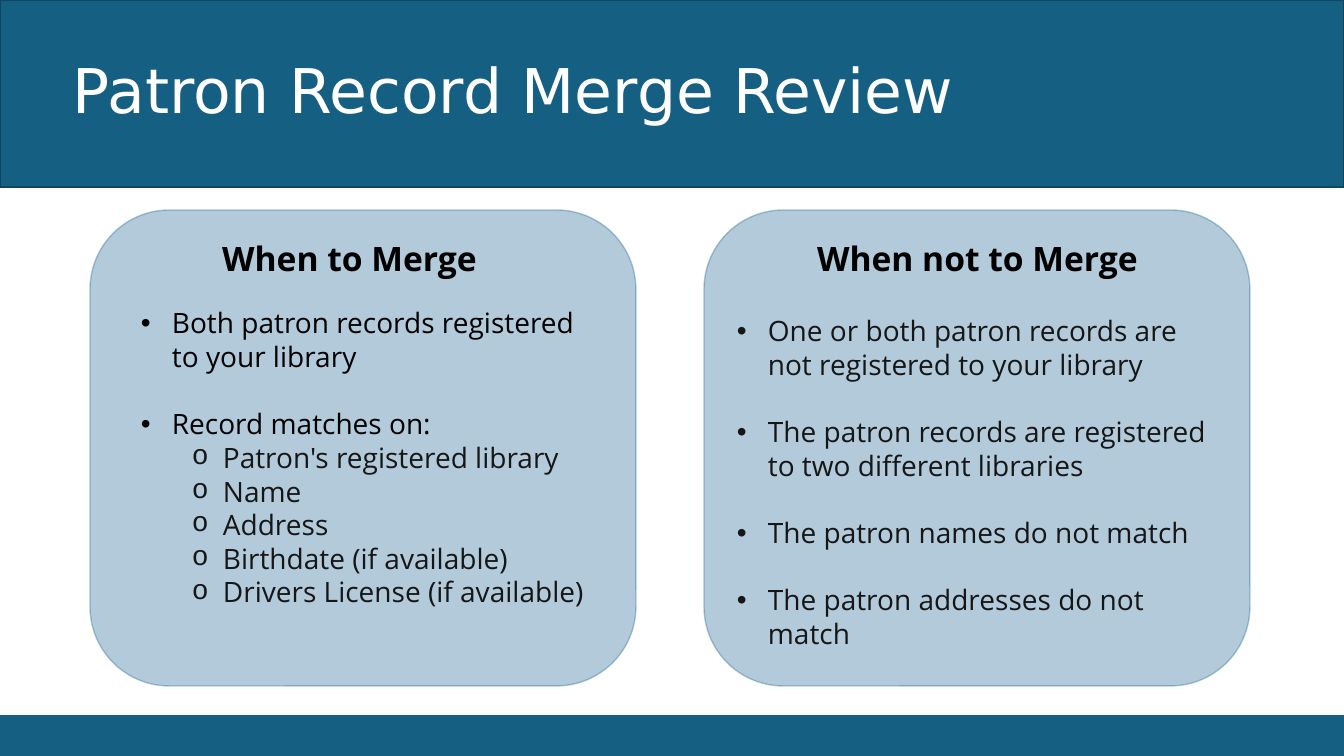
"""Builds the slide that compares when to merge patron records and when not to."""
from lxml.etree import SubElement
from pptx import Presentation
from pptx.dml.color import RGBColor
from pptx.enum.shapes import MSO_SHAPE as Shape
from pptx.enum.text import MSO_ANCHOR as Anchor, PP_ALIGN as Align
from pptx.oxml.ns import qn
from pptx.util import Pt

TITLE = "Patron Record Merge Review"
BLACK, INK, WHITE = "000000", "161617", "FFFFFF"
TEAL, TEAL_EDGE, NAVY = "156082", "104760", "025283"
CARDS = [
    {"card": (90, 210, 546, 476), "heading": "When to Merge",
     "heading_box": (148, 233, 403, 50), "list_box": (131, 301, 468, 346),
     "points": [
         (0, "Both patron records registered to your library", BLACK),
         (0, "Record matches on:", BLACK),
         (1, "Patron's registered library", INK),
         (1, "Name", INK),
         (1, "Address", INK),
         (1, "Birthdate (if available)", INK),
         (1, "Drivers License (if available)", INK)]},
    {"card": (704, 210, 546, 476), "heading": "When not to Merge",
     "heading_box": (776, 233, 403, 50), "list_box": (727, 309, 500, 346),
     "points": [
         (0, "One or both patron records are not registered to your library", INK),
         (0, "The patron records are registered to two different libraries", INK),
         (0, "The patron names do not match", INK),
         (0, "The patron addresses do not match", INK)]},
]
BANDS = [((0, 715, 1344, 41), None), ((0, 0, 1344, 187), TEAL_EDGE)]
BULLETS = [("•", "Arial", 31), ("o", "Courier New", 82)]
HANG = 31
LINE_PITCH = 24


def px(length):
    return round(length * 914400 / 100.8)


def rgb(code):
    return RGBColor.from_string(code)


def add_block(slide, preset, box, fill, edge, opacity=None):
    block = slide.shapes.add_shape(preset, *map(px, box))
    block.shadow.inherit = False
    block.fill.solid()
    block.fill.fore_color.rgb = rgb(fill)
    if edge:
        block.line.color.rgb = rgb(edge)
        block.line.width = Pt(1)
    else:
        block.line.fill.background()
    if opacity:
        for tint in block._element.spPr.iter(qn("a:srgbClr")):
            SubElement(tint, qn("a:alpha"), val=str(opacity * 1000))


def add_frame(slide, box, anchor=Anchor.TOP):
    frame = slide.shapes.add_textbox(*map(px, box)).text_frame
    frame.word_wrap = True
    frame.vertical_anchor = anchor
    return frame


def write(paragraph, text, color, spacing, **font):
    paragraph.line_spacing = spacing
    paragraph.add_run().text = text
    for name, value in font.items():
        setattr(paragraph.runs[0].font, name, value)
    paragraph.runs[0].font.color.rgb = rgb(color)


def add_bullet(paragraph, level):
    mark, typeface, indent = BULLETS[level]
    paragraph.level = level
    layout = paragraph._p.get_or_add_pPr()
    layout.set("marL", str(px(indent)))
    layout.set("indent", str(-px(HANG)))
    SubElement(layout, qn("a:buFont"), typeface=typeface)
    SubElement(layout, qn("a:buChar"), char=mark)


def add_points(slide, box, points):
    frame = add_frame(slide, box)
    for order, (level, text, color) in enumerate(points):
        point = frame.add_paragraph() if order else frame.paragraphs[0]
        add_bullet(point, level)
        if order and level == 0:
            point.space_before = Pt(LINE_PITCH)
        write(point, text, color, Pt(LINE_PITCH), name="Open Sans", size=Pt(20))


def main():
    deck = Presentation()
    deck.slide_width, deck.slide_height = px(1344), px(756)
    slide = deck.slides.add_slide(deck.slide_layouts[6])
    for box, edge in BANDS:
        add_block(slide, Shape.RECTANGLE, box, TEAL, edge)
    title = add_frame(slide, (63, 0, 1280, 187), Anchor.MIDDLE)
    write(title.paragraphs[0], TITLE, WHITE, 0.9, name="DejaVu Sans", size=Pt(44))
    for side in CARDS:
        add_block(slide, Shape.ROUNDED_RECTANGLE, side["card"], NAVY, NAVY, 30)
        heading = add_frame(slide, side["heading_box"]).paragraphs[0]
        heading.alignment = Align.CENTER
        write(heading, side["heading"], BLACK, Pt(29),
              name="Open Sans", size=Pt(24), bold=True)
        add_points(slide, side["list_box"], side["points"])
    deck.save("out.pptx")


if __name__ == "__main__":
    main()
